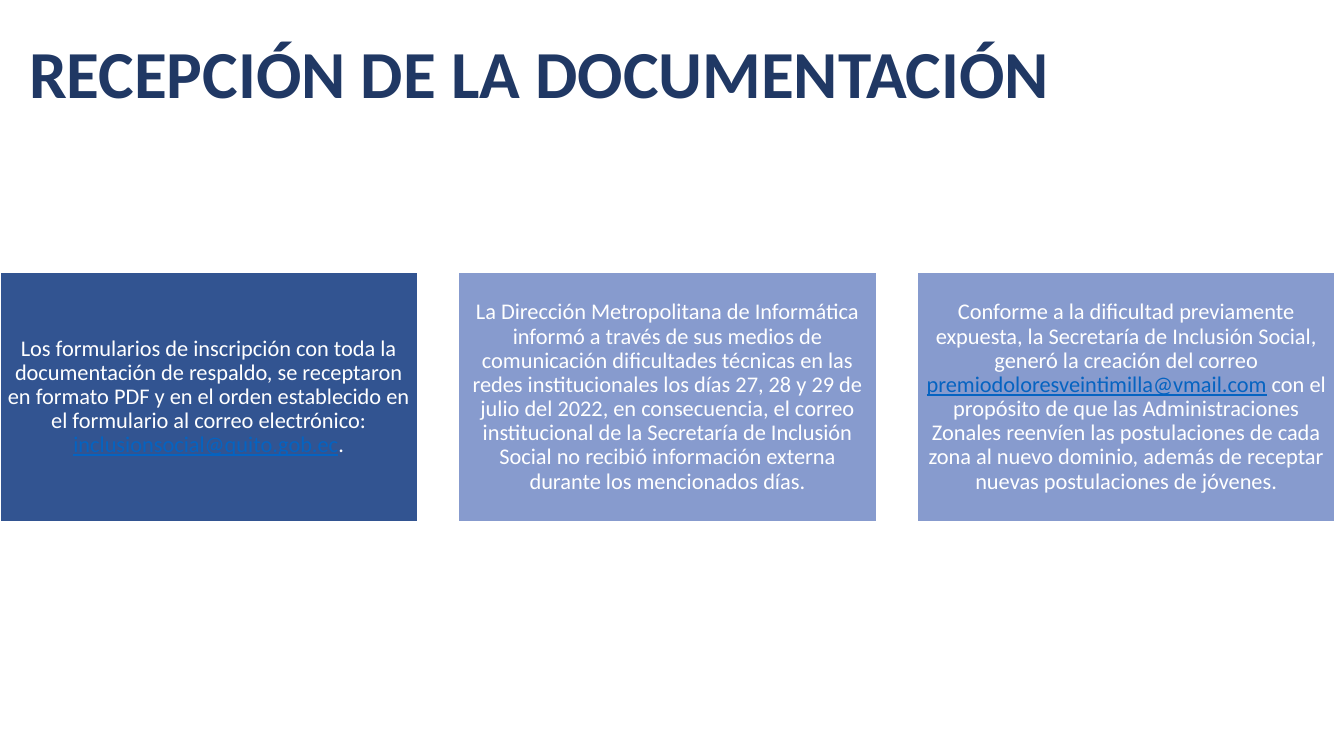
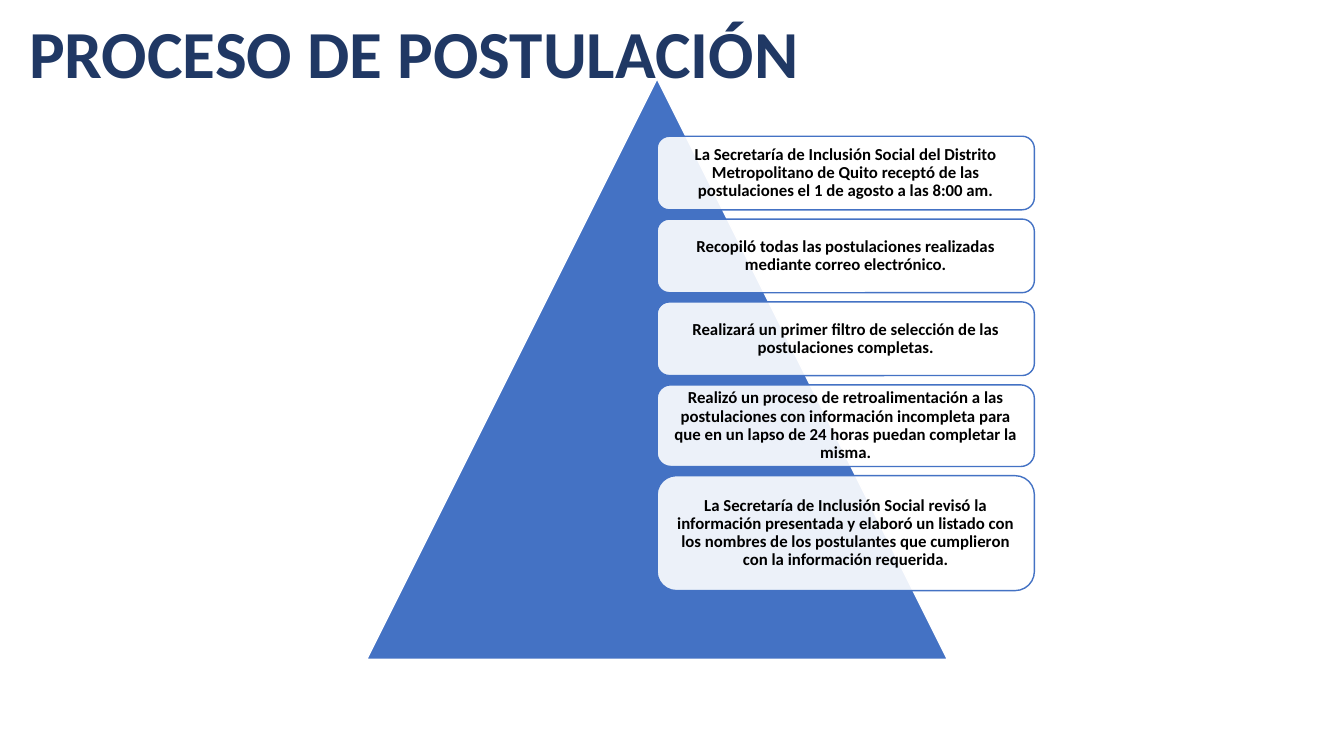
from dataclasses import dataclass

from lxml.etree import SubElement
from pptx import Presentation
from pptx.dml.color import RGBColor
from pptx.enum.shapes import MSO_SHAPE as Preset
from pptx.enum.text import MSO_ANCHOR as Anchor, PP_ALIGN as Align
from pptx.oxml.ns import qn
from pptx.shapes.autoshape import Shape
from pptx.slide import Slide
from pptx.text.text import TextFrame
from pptx.util import Pt

FONT = "Calibri"
NAVY = RGBColor(0x20, 0x38, 0x64)
DARK_BLUE = RGBColor(0x32, 0x54, 0x91)
SOFT_BLUE = RGBColor(0x87, 0x9B, 0xCE)
BLUE = RGBColor(0x44, 0x72, 0xC4)
LINK_BLUE = RGBColor(0x05, 0x63, 0xC1)
WHITE = RGBColor(0xFF, 0xFF, 0xFF)
BLACK = RGBColor(0x00, 0x00, 0x00)


@dataclass(frozen=True)
class Box:
    left: float
    top: float
    width: float
    height: float


@dataclass(frozen=True)
class TextStyle:
    size: float
    color: RGBColor
    bold: bool = False
    align: Align = Align.CENTER
    inset: float = 3.6


@dataclass(frozen=True)
class TextRun:
    text: str
    is_address: bool = False


@dataclass(frozen=True)
class Card:
    fill: RGBColor
    runs: tuple[TextRun, ...]


@dataclass(frozen=True)
class Step:
    height: float
    text: str


TITLE_STYLE = TextStyle(48, NAVY, bold=True, align=Align.LEFT, inset=7.2)
CARD_STYLE = TextStyle(16, WHITE, inset=4.8)
STEP_STYLE = TextStyle(12, BLACK, bold=True)

CARD_AREA = Box(0, 194.4, 298.2, 178.6)
CARD_GAP = 29.5
CARDS = (
    Card(DARK_BLUE, (
        TextRun("Los formularios de inscripción con toda la documentación de "
                "respaldo, se receptaron en formato PDF y en el orden "
                "establecido en el formulario al correo electrónico: "),
        TextRun("inclusionsocial@quito.gob.ec", is_address=True),
        TextRun("."),
    )),
    Card(SOFT_BLUE, (
        TextRun("La Dirección Metropolitana de Informática informó a través de "
                "sus medios de comunicación dificultades técnicas en las redes "
                "institucionales los días 27, 28 y 29 de julio del 2022, en "
                "consecuencia, el correo institucional de la Secretaría de "
                "Inclusión Social no recibió información externa durante los "
                "mencionados días."),
    )),
    Card(SOFT_BLUE, (
        TextRun("Conforme a la dificultad previamente expuesta, la Secretaría "
                "de Inclusión Social, generó la creación del correo "),
        TextRun("premiodoloresveintimilla@vmail.com", is_address=True),
        TextRun(" con el propósito de que las Administraciones Zonales "
                "reenvíen las postulaciones de cada zona al nuevo dominio, "
                "además de receptar nuevas postulaciones de jóvenes."),
    )),
)

PYRAMID = Box(262, 56.2, 414.7, 414.7)
STEP_LEFT = PYRAMID.left + PYRAMID.width / 2
STEP_TOP = 97.3
STEP_WIDTH = 269.5
STEP_GAP = 6.6
STEP_OPACITY = 90
STEPS = (
    Step(52.6, "La Secretaría de Inclusión Social del Distrito Metropolitano de "
               "Quito receptó de las postulaciones el 1 de agosto a las 8:00 am."),
    Step(52.6, "Recopiló todas las postulaciones realizadas mediante correo "
               "electrónico."),
    Step(52.6, "Realizará un primer filtro de selección de las postulaciones "
               "completas."),
    Step(58.3, "Realizó un proceso de retroalimentación a las postulaciones con "
               "información incompleta para que en un lapso de 24 horas puedan "
               "completar la misma."),
    Step(82.1, "La Secretaría de Inclusión Social revisó la información "
               "presentada y elaboró un listado con los nombres de los "
               "postulantes que cumplieron con la información requerida."),
)


def write_text(frame: TextFrame, runs: tuple[TextRun, ...], style: TextStyle) -> None:
    frame.word_wrap = True
    frame.vertical_anchor = Anchor.MIDDLE
    frame.margin_left = frame.margin_right = Pt(style.inset)
    frame.margin_top = frame.margin_bottom = Pt(min(style.inset, 4.8))
    paragraph = frame.paragraphs[0]
    paragraph.alignment = style.align
    paragraph.line_spacing = 0.9
    for item in runs:
        run = paragraph.add_run()
        run.text = item.text
        run.font.name = FONT
        run.font.size = Pt(style.size)
        run.font.bold = style.bold
        run.font.underline = item.is_address
        run.font.color.rgb = LINK_BLUE if item.is_address else style.color


def add_title(slide: Slide, text: str, top: float) -> None:
    title = slide.shapes.add_textbox(Pt(13.7), Pt(top), Pt(768), Pt(75))
    write_text(title.text_frame, (TextRun(text),), TITLE_STYLE)


def add_panel(slide: Slide, preset: Preset, box: Box, fill: RGBColor,
              line: RGBColor) -> Shape:
    shape = slide.shapes.add_shape(
        preset, Pt(box.left), Pt(box.top), Pt(box.width), Pt(box.height))
    shape.shadow.inherit = False
    shape.fill.solid()
    shape.fill.fore_color.rgb = fill
    shape.line.color.rgb = line
    shape.line.width = Pt(1)
    return shape


def set_opacity(shape: Shape, percent: int) -> None:
    color = shape.element.spPr.find(qn("a:solidFill")).find(qn("a:srgbClr"))
    SubElement(color, qn("a:alpha")).set("val", str(percent * 1000))


def build_reception(slide: Slide) -> None:
    for index, card in enumerate(CARDS):
        left = CARD_AREA.left + index * (CARD_AREA.width + CARD_GAP)
        box = Box(left, CARD_AREA.top, CARD_AREA.width, CARD_AREA.height)
        panel = add_panel(slide, Preset.RECTANGLE, box, card.fill, WHITE)
        write_text(panel.text_frame, card.runs, CARD_STYLE)
    add_title(slide, "RECEPCIÓN DE LA DOCUMENTACIÓN", 17.3)


def build_process(slide: Slide) -> None:
    add_title(slide, "PROCESO DE POSTULACIÓN", 2.9)
    add_panel(slide, Preset.ISOSCELES_TRIANGLE, PYRAMID, BLUE, WHITE)
    top = STEP_TOP
    for step in STEPS:
        box = Box(STEP_LEFT, top, STEP_WIDTH, step.height)
        panel = add_panel(slide, Preset.ROUNDED_RECTANGLE, box, WHITE, BLUE)
        set_opacity(panel, STEP_OPACITY)
        write_text(panel.text_frame, (TextRun(step.text),), STEP_STYLE)
        top += step.height + STEP_GAP


def main() -> None:
    presentation = Presentation()
    presentation.slide_width = Pt(960)
    presentation.slide_height = Pt(540)
    blank = presentation.slide_layouts[6]
    for build in (build_reception, build_process):
        build(presentation.slides.add_slide(blank))
    presentation.save("out.pptx")


if __name__ == "__main__":
    main()
